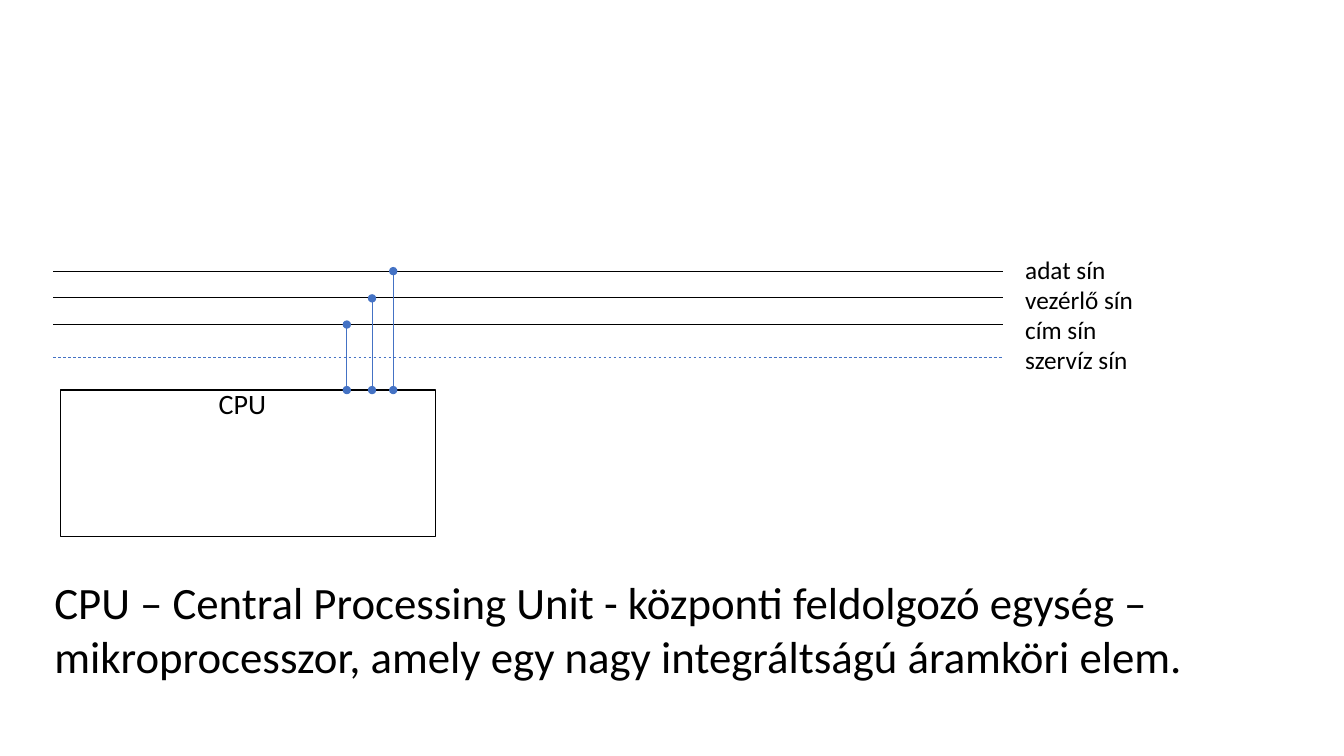
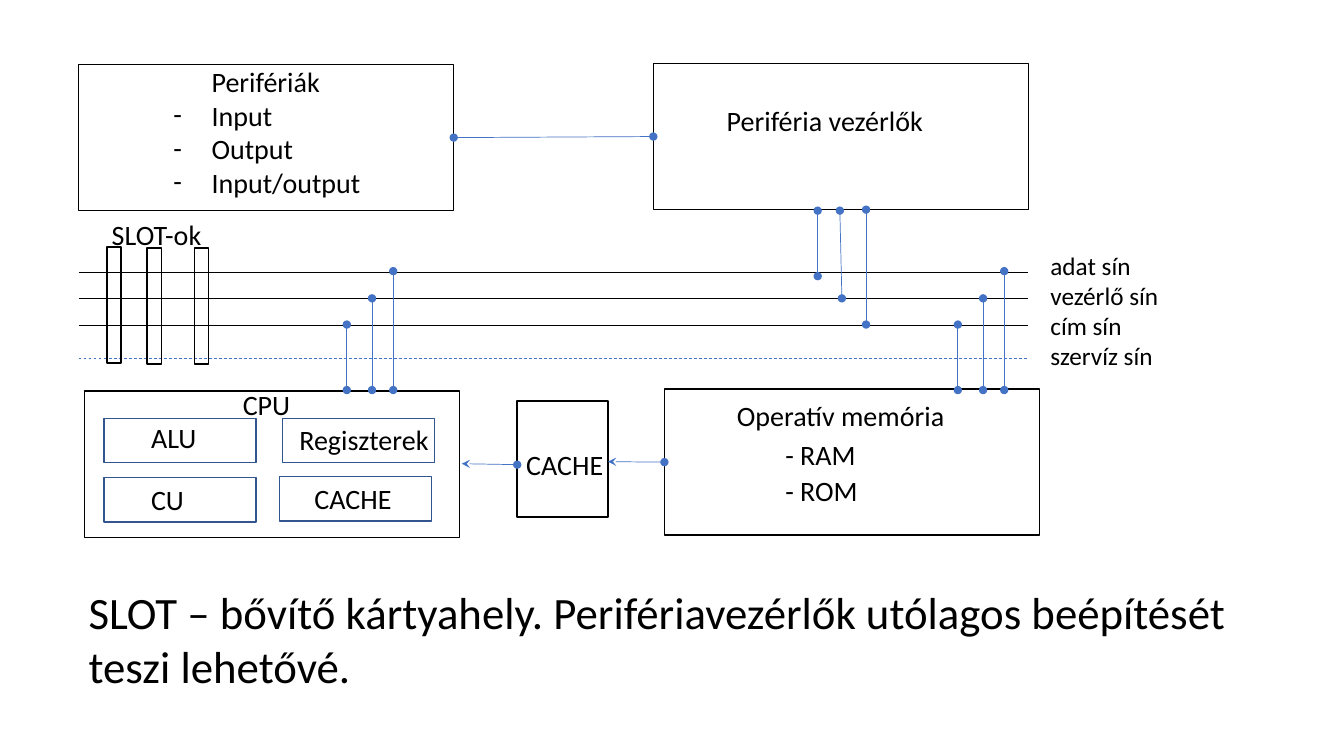
from dataclasses import dataclass

from lxml.etree import SubElement
from pptx import Presentation
from pptx.dml.color import RGBColor
from pptx.enum.dml import MSO_LINE
from pptx.enum.shapes import MSO_CONNECTOR, MSO_SHAPE
from pptx.enum.text import MSO_AUTO_SIZE
from pptx.oxml.ns import qn
from pptx.shapes.autoshape import Shape
from pptx.shapes.connector import Connector
from pptx.slide import Slide
from pptx.util import Emu, Pt

BLACK = RGBColor(0x00, 0x00, 0x00)
BLUE = RGBColor(0x44, 0x72, 0xC4)
DARK_BLUE = RGBColor(0x32, 0x54, 0x91)
FONT = "Calibri"
PIXEL = 9144
LIST_INDENT = 38
BUS_LENGTH = 942
BUS_OFFSETS = (0, 26, 53, 86)
BUS_NAMES = "adat sín\nvezérlő sín\ncím sín\nszervíz sín"
BLOCK_WIDTH, BLOCK_HEIGHT = 372, 145
UNIT_WIDTH, UNIT_HEIGHT = 151, 44
LABEL_HEIGHT = 44


@dataclass(frozen=True)
class Frame:
    left: int
    top: int
    width: int
    height: int


@dataclass(frozen=True)
class Label:
    text: str
    left: int
    top: int
    width: int


@dataclass(frozen=True)
class Wire:
    start_x: int
    start_y: int
    end_x: int
    end_y: int


def px(value: int) -> Emu:
    return Emu(value * PIXEL)


def add_text(page: Slide, text: str, frame: Frame, *, size: int = 20,
             listed: bool = False) -> None:
    box = page.shapes.add_textbox(
        px(frame.left), px(frame.top), px(frame.width), px(frame.height))
    body = box.text_frame
    body.word_wrap = True
    body.auto_size = MSO_AUTO_SIZE.SHAPE_TO_FIT_TEXT
    for index, line in enumerate(text.split("\n")):
        para = body.add_paragraph() if index else body.paragraphs[0]
        span = para.add_run()
        span.text = line
        span.font.name = FONT
        span.font.size = Pt(size)
        span.font.color.rgb = BLACK
        if listed:
            properties = para._p.get_or_add_pPr()
            properties.set("marL", str(px(LIST_INDENT)))
            if index:
                properties.set("indent", str(px(-LIST_INDENT)))
                SubElement(properties, qn("a:buFont"), typeface=FONT)
                SubElement(properties, qn("a:buChar"), char="-")
            else:
                properties.set("indent", "0")


def add_label(page: Slide, label: Label) -> None:
    add_text(page, label.text,
             Frame(label.left, label.top, label.width, LABEL_HEIGHT))


def add_box(page: Slide, frame: Frame, color: RGBColor = BLACK) -> Shape:
    box = page.shapes.add_shape(
        MSO_SHAPE.RECTANGLE, px(frame.left), px(frame.top),
        px(frame.width), px(frame.height))
    box.shadow.inherit = False
    box.fill.background()
    box.line.color.rgb = color
    box.line.width = Pt(1)
    return box


def add_block(page: Slide, left: int, top: int) -> Shape:
    return add_box(page, Frame(left, top, BLOCK_WIDTH, BLOCK_HEIGHT))


def add_line(page: Slide, wire: Wire, *, color: RGBColor = BLUE,
             head: str = "", tail: str = "", dashed: bool = False) -> Connector:
    connector = page.shapes.add_connector(
        MSO_CONNECTOR.STRAIGHT, px(wire.start_x), px(wire.start_y),
        px(wire.end_x), px(wire.end_y))
    connector.line.color.rgb = color
    connector.line.width = Pt(0.5)
    if dashed:
        connector.line.dash_style = MSO_LINE.DASH
    properties = connector._element.spPr
    outline = properties.find(qn("a:ln"))
    for tag, kind in (("a:headEnd", head), ("a:tailEnd", tail)):
        if kind:
            SubElement(outline, qn(tag), type=kind)
    SubElement(properties, qn("a:effectLst"))
    return connector


def add_wire(page: Slide, wire: Wire, tail: str = "oval") -> Connector:
    return add_line(page, wire, head="oval", tail=tail)


def add_buses(page: Slide, left: int, top: int, names_top: int) -> None:
    right = left + BUS_LENGTH
    for offset in BUS_OFFSETS:
        service = offset == BUS_OFFSETS[-1]
        add_line(page, Wire(left, top + offset, right, top + offset),
                 color=BLUE if service else BLACK, dashed=service)
    add_text(page, BUS_NAMES, Frame(right + 12, names_top, 217, 131), size=18)


def add_bus_taps(page: Slide, left: int) -> None:
    for offset, top in ((46, 269), (25, 296), (0, 322)):
        add_wire(page, Wire(left + offset, 387, left + offset, top))


def add_processor(page: Slide, left: int, top: int) -> None:
    add_block(page, left, top)
    add_label(page, Label("CPU", left + 147, top - 8, 76))
    add_bus_taps(page, 344)


def add_caption(page: Slide, text: str, left: int, top: int) -> None:
    add_text(page, text, Frame(left, top, 1194, 118), size=32)


def build_processor_page(page: Slide) -> None:
    add_buses(page, 53, 269, 247)
    add_caption(page, "CPU – Central Processing Unit - központi feldolgozó egység – "
                "mikroprocesszor, amely egy nagy integráltságú áramköri elem.", 44, 565)
    add_processor(page, 60, 387)


def build_slot_page(page: Slide) -> None:
    add_buses(page, 78, 270, 243)
    add_caption(page, "SLOT – bővítő kártyahely. Perifériavezérlők utólagos "
                "beépítését teszi lehetővé.", 78, 575)
    add_processor(page, 84, 388)
    for left, top in ((103, 415), (103, 474), (280, 415), (277, 473)):
        add_box(page, Frame(left, top, UNIT_WIDTH, UNIT_HEIGHT), DARK_BLUE)

    memory = add_block(page, 659, 386)
    devices = add_block(page, 78, 64)
    controllers = add_block(page, 648, 63)
    add_box(page, Frame(513, 398, 90, 115))
    for left, top in ((106, 245), (146, 246), (193, 246)):
        add_box(page, Frame(left, top, 14, 115))

    add_text(page, "Perifériák\nInput\nOutput\nInput/output",
             Frame(162, 59, 235, 145), listed=True)
    for label in (
        Label("ALU", 140, 412, 76),
        Label("CU", 140, 474, 76),
        Label("Regiszterek", 287, 414, 153),
        Label("CACHE", 302, 473, 114),
        Label("CACHE", 512, 439, 114),
        Label("Operatív memória", 721, 390, 226),
        Label("- RAM", 769, 429, 153),
        Label("- ROM", 769, 465, 153),
        Label("Periféria vezérlők", 711, 98, 226),
        Label("SLOT-ok", 101, 211, 115),
    ):
        add_label(page, label)

    add_bus_taps(page, 950)
    for wire in (Wire(859, 322, 859, 208), Wire(835, 296, 833, 209),
                 Wire(811, 274, 811, 209)):
        add_wire(page, wire)
    device_link = add_wire(page, Wire(648, 135, 450, 137))
    device_link.begin_connect(controllers, 1)
    device_link.end_connect(devices, 3)
    memory_link = add_wire(page, Wire(659, 458, 603, 458), "stealth")
    memory_link.begin_connect(memory, 1)
    add_wire(page, Wire(513, 461, 458, 460), "stealth")


def main() -> None:
    deck = Presentation()
    deck.slide_width = px(1333)
    deck.slide_height = px(750)
    for build_page in (build_processor_page, build_slot_page):
        build_page(deck.slides.add_slide(deck.slide_layouts[6]))
    deck.save("out.pptx")


if __name__ == "__main__":
    main()
